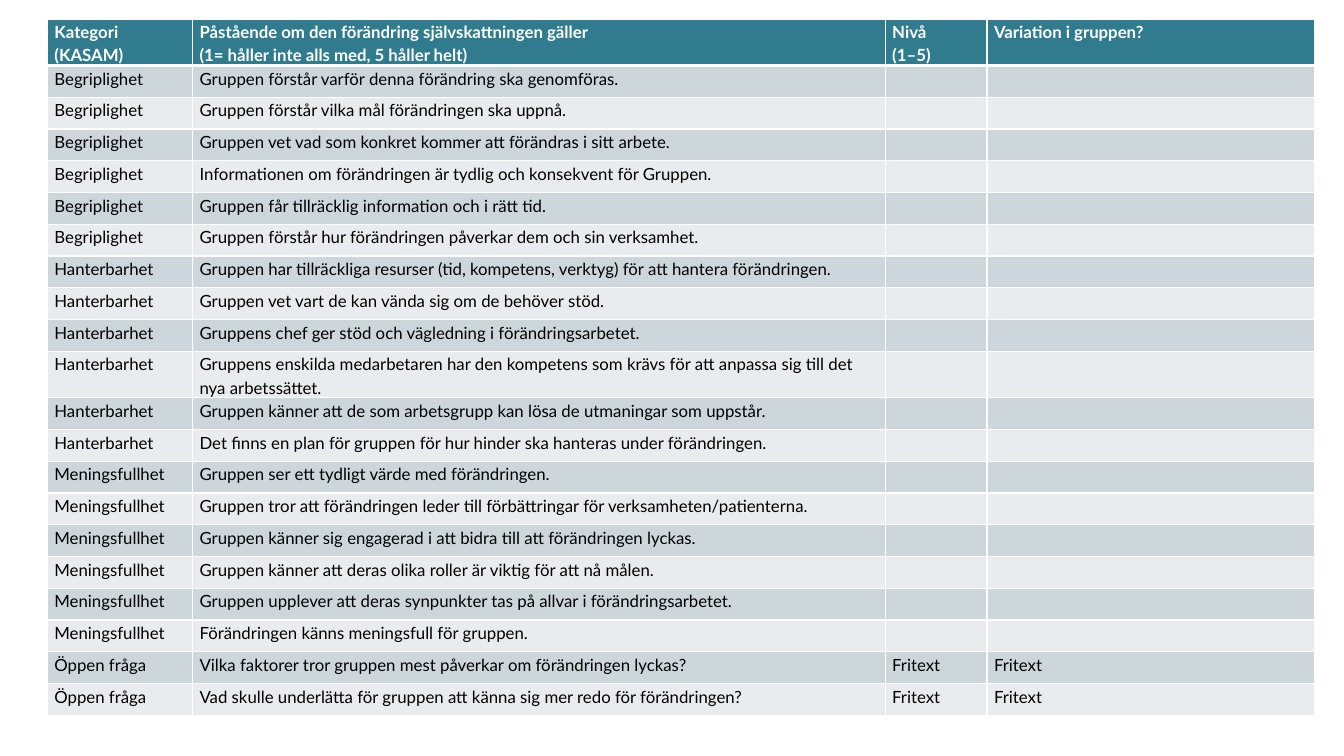
from copy import deepcopy

from lxml import etree
from pptx import Presentation
from pptx.dml.color import RGBColor
from pptx.oxml import ns
from pptx.util import Inches, Pt

WHITE = RGBColor(0xFF, 0xFF, 0xFF)
BLACK = RGBColor(0x00, 0x00, 0x00)
TEAL = RGBColor(0x30, 0x7C, 0x8E)
BANDS = (RGBColor(0xCD, 0xD7, 0xDB), RGBColor(0xE8, 0xEC, 0xEE))

COLUMN_WIDTHS = (1.44, 6.87, 1.01, 3.25)
ROW_HEIGHT = 6.3 / 20
HEADER = (
    "Kategori (KASAM)",
    "Påstående om den förändring självskattningen gäller \n"
    "(1= håller inte alls med, 5 håller helt)",
    "Nivå\n(1–5)",
    "Variation i gruppen?",
)
STATEMENTS = {
    "Begriplighet": (
        "Gruppen förstår varför denna förändring ska genomföras.",
        "Gruppen förstår vilka mål förändringen ska uppnå.",
        "Gruppen vet vad som konkret kommer att förändras i sitt arbete.",
        "Informationen om förändringen är tydlig och konsekvent för Gruppen.",
        "Gruppen får tillräcklig information och i rätt tid.",
        "Gruppen förstår hur förändringen påverkar dem och sin verksamhet.",
    ),
    "Hanterbarhet": (
        "Gruppen har tillräckliga resurser (tid, kompetens, verktyg) för att hantera förändringen.",
        "Gruppen vet vart de kan vända sig om de behöver stöd.",
        "Gruppens chef ger stöd och vägledning i förändringsarbetet.",
        "Gruppens enskilda medarbetaren har den kompetens som krävs för att anpassa sig till det "
        "nya arbetssättet.",
        "Gruppen känner att de som arbetsgrupp kan lösa de utmaningar som uppstår.",
        "Det finns en plan för gruppen för hur hinder ska hanteras under förändringen.",
    ),
    "Meningsfullhet": (
        "Gruppen ser ett tydligt värde med förändringen.",
        "Gruppen tror att förändringen leder till förbättringar för verksamheten/patienterna.",
        "Gruppen känner sig engagerad i att bidra till att förändringen lyckas.",
        "Gruppen känner att deras olika roller är viktig för att nå målen.",
        "Gruppen upplever att deras synpunkter tas på allvar i förändringsarbetet.",
        "Förändringen känns meningsfull för gruppen.",
    ),
    "Öppen fråga": (
        "Vilka faktorer tror gruppen mest påverkar om förändringen lyckas?",
        "Vad skulle underlätta för gruppen att känna sig mer redo för förändringen?",
    ),
}


def apply(target, values):
    for name, value in values.items():
        setattr(target, name, value)


class SurveyPage:
    """Holds the table style and the current slide."""

    font = {"name": "Lato", "size": Pt(12)}
    spacing = {"line_spacing": 1.15, "space_after": Pt(8)}
    margins = {
        "margin_left": Inches(0.07), "margin_right": Inches(0.07),
        "margin_top": 0, "margin_bottom": 0,
    }

    def __init__(self, deck):
        self.page = deck.slides.add_slide(deck.slide_layouts[6])

    def table(self, left, top, rows):
        width = Inches(sum(COLUMN_WIDTHS))
        height = Inches(ROW_HEIGHT * (len(rows) - 1))
        frame = self.page.shapes.add_table(
            len(rows), len(COLUMN_WIDTHS), Inches(left), Inches(top), width, height)
        table = frame.table
        for column, column_width in zip(table.columns, COLUMN_WIDTHS):
            column.width = Inches(column_width)
        for index, (row, texts) in enumerate(zip(table.rows, rows)):
            # The header row grows to fit its two lines
            row.height = Inches(ROW_HEIGHT) if index else 0
            for cell, words in zip(row.cells, texts):
                if index:
                    self.cell(cell, words, BANDS[(index - 1) % 2], BLACK, False)
                else:
                    self.cell(cell, words, TEAL, WHITE, True)
                    self.borders(cell, {"lnL": 1, "lnR": 1, "lnT": 1, "lnB": 3})

    def cell(self, cell, words, fill, color, bold):
        apply(cell, self.margins)
        cell.fill.solid()
        cell.fill.fore_color.rgb = fill
        if not words:
            return
        para = cell.text_frame.paragraphs[0]
        para.text = words
        apply(para, self.spacing)
        for span in para.runs:
            apply(span.font, {**self.font, "bold": bold})
            span.font.color.rgb = color
        # Line breaks take the same text size as the words around them
        for line_break in para._p.findall(ns.qn("a:br")):
            line_break.append(deepcopy(para.runs[0]._r.rPr))

    def borders(self, cell, widths):
        properties = cell._tc.get_or_add_tcPr()
        for position, (side, points) in enumerate(widths.items()):
            line = etree.Element(ns.qn(f"a:{side}"), w=str(Pt(points)))
            paint = etree.SubElement(line, ns.qn("a:solidFill"))
            etree.SubElement(paint, ns.qn("a:srgbClr"), val=str(WHITE))
            properties.insert(position, line)


def main():
    deck = Presentation()
    deck.slide_width, deck.slide_height = Inches(13.33), Inches(7.5)

    # Header, then one row per statement; open questions take free text
    rows = [HEADER]
    for category, statements in STATEMENTS.items():
        answer = "Fritext" if category == "Öppen fråga" else ""
        rows += [(category, statement, answer, answer) for statement in statements]

    SurveyPage(deck).table(0.47, 0.19, rows)
    deck.save("out.pptx")


if __name__ == "__main__":
    main()
